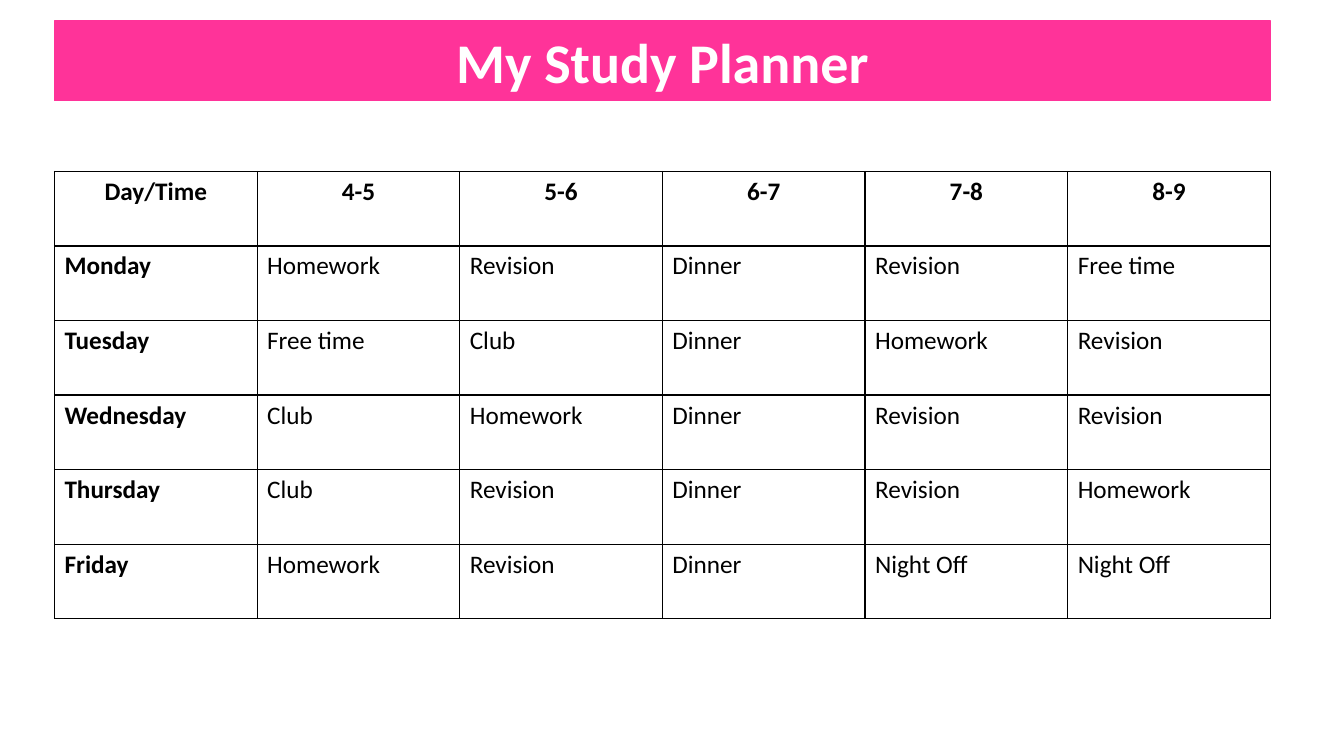
from lxml import etree
from pptx import Presentation
from pptx.dml.color import RGBColor
from pptx.enum.text import MSO_ANCHOR, MSO_AUTO_SIZE, PP_ALIGN
from pptx.oxml.ns import qn
from pptx.util import Inches, Pt

MIDDLE = MSO_ANCHOR.MIDDLE
FIXED = MSO_AUTO_SIZE.NONE
CENTER, LEFT = PP_ALIGN.CENTER, PP_ALIGN.LEFT
COLORS = {"pink": "FF3399", "white": "FFFFFF", "black": "000000"}
EDGE, WIDTH = 0.54, 12.06
ROWS = [
    ["Day/Time", "4-5", "5-6", "6-7", "7-8", "8-9"],
    ["Monday", "Homework", "Revision", "Dinner", "Revision", "Free time"],
    ["Tuesday", "Free time", "Club", "Dinner", "Homework", "Revision"],
    ["Wednesday", "Club", "Homework", "Dinner", "Revision", "Revision"],
    ["Thursday", "Club", "Revision", "Dinner", "Revision", "Homework"],
    ["Friday", "Homework", "Revision", "Dinner", "Night Off", "Night Off"],
]


class Planner:
    """Draw the parts of a study planner on one slide."""

    def __init__(self, slide, font="Calibri"):
        self.slide = slide
        self.font = font

    def color(self, name):
        return RGBColor.from_string(COLORS[name])

    def label(self, frame, text, size, color, bold, align):
        line = frame.paragraphs[0]
        line.alignment = align
        run = line.add_run()
        run.text = text
        run.font.name = self.font
        run.font.size = Pt(size)
        run.font.bold = bold
        run.font.color.rgb = self.color(color)

    def title(self, text, top, height):
        box = self.slide.shapes.title
        box.left, box.top = Inches(EDGE), Inches(top)
        box.width, box.height = Inches(WIDTH), Inches(height)
        box.fill.solid()
        box.fill.fore_color.rgb = self.color("pink")
        box.line.color.rgb = self.color("pink")
        box.line.width = Pt(1)
        frame = box.text_frame
        frame.auto_size = FIXED
        frame.vertical_anchor = MIDDLE
        self.label(frame, text, 40, "white", True, CENTER)

    def border(self, cell):
        props = cell._tc.get_or_add_tcPr()
        for place, side in enumerate(("lnL", "lnR", "lnT", "lnB")):
            line = etree.Element(qn(f"a:{side}"), w=str(Pt(1)))
            fill = etree.SubElement(line, qn("a:solidFill"))
            etree.SubElement(fill, qn("a:srgbClr"), val=COLORS["black"])
            props.insert(place, line)

    def table(self, rows, top, height):
        count = len(rows[0])
        grid = self.slide.shapes.add_table(
            len(rows), count, Inches(EDGE), Inches(top),
            Inches(WIDTH), Inches(height * len(rows))).table
        grid.first_row = grid.horz_banding = False
        for col in grid.columns:
            col.width = Inches(WIDTH / count)
        for r, row in enumerate(rows):
            grid.rows[r].height = Inches(height)
            for c, text in enumerate(row):
                cell = grid.cell(r, c)
                cell.fill.background()
                self.border(cell)
                self.label(cell.text_frame, text, 18, "black",
                           r == 0 or c == 0, CENTER if r == 0 else LEFT)


def main():
    deck = Presentation()
    deck.slide_width, deck.slide_height = Inches(13.33), Inches(7.5)
    planner = Planner(deck.slides.add_slide(deck.slide_layouts[5]))
    planner.title("My Study Planner", 0.21, 0.79)
    planner.table(ROWS, 1.7, 0.74)
    deck.save("out.pptx")


if __name__ == "__main__":
    main()
